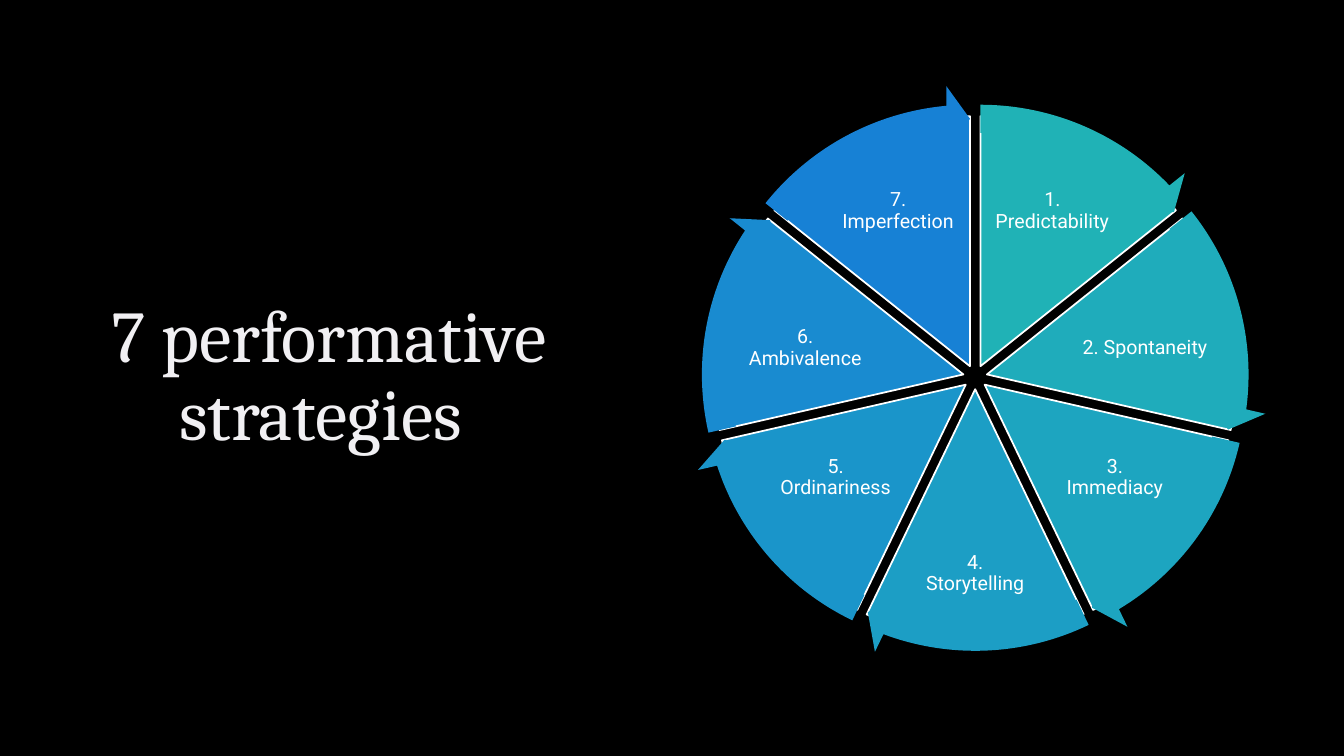
import math
from dataclasses import dataclass

from lxml import etree
from pptx import Presentation, util as u
from pptx.dml.color import RGBColor
from pptx.enum import shapes, text
from pptx.oxml import ns

COLOURS = {
    "background": "000000", "title": "F1F0F3", "outline": "404040", "white": "FFFFFF",
    "predictability": "20B2B6", "spontaneity": "1FACBB", "immediacy": "1DA5C0",
    "storytelling": "1C9EC5", "ordinariness": "1A95CA", "ambivalence": "198BD0",
    "imperfection": "1781D5",
}

# Grid of 160 columns by 90 rows with square cells
COLS, ROWS = 160, 90
SLIDE_W, SLIDE_H = u.Inches(40 / 3), u.Inches(7.5)
CELL = SLIDE_H / ROWS

# Wheel geometry, in grid cells; preset angles count 216 units to a turn
CENTRE_X, CENTRE_Y = 116.1, 44.9
GAP, PIE, ARROW = 1.44, 59.52, 66.96
TURN = 216
BAND, HEAD_ANGLE, HEAD_WIDTH = 0.05, 3.28, 0.06


@dataclass(frozen=True)
class Box:
    x: float  # centre
    y: float
    w: float
    h: float

    def emu(self) -> list[int]:
        corner = (self.x - self.w / 2, self.y - self.h / 2)
        return [round(v * CELL) for v in (*corner, self.w, self.h)]


@dataclass(frozen=True)
class Strategy:
    label: str
    colour: str
    dx: float  # label centre, from the wheel's axis
    y: float
    w: float
    h: float


STRATEGIES = [
    Strategy("1. Predictability", "predictability", 9.18, 25.14, 14.16, 11.4),
    Strategy("2. Spontaneity", "spontaneity", 20.22, 41.46, 16.32, 9.96),
    Strategy("3. Immediacy", "immediacy", 16.62, 56.88, 14.16, 11.04),
    Strategy("4. Storytelling", "storytelling", 0, 68.34, 13.8, 9.96),
    Strategy("5. Ordinariness", "ordinariness", -16.62, 56.88, 14.16, 11.04),
    Strategy("6. Ambivalence", "ambivalence", -20.22, 41.46, 16.32, 9.96),
    Strategy("7. Imperfection", "imperfection", -9.18, 25.14, 14.16, 11.4),
]
STEP = TURN / len(STRATEGIES)

TITLE_FONT = {"name": "Cambria", "size": u.Pt(52)}
LABEL_FONT = {"name": "Roboto", "size": u.Pt(14)}
LABEL_INSETS = {f"margin_{side}": u.Inches(0.02) for side in ("left", "top", "right", "bottom")}


def rgb(name: str) -> RGBColor:
    return RGBColor.from_string(COLOURS[name])


def apply(target, values: dict) -> None:
    for name, value in values.items():
        setattr(target, name, value)


def add_text(s, box: Box, words: str, font: dict, colour: str, insets: dict):
    tf = s.shapes.add_textbox(*box.emu()).text_frame
    apply(tf, {"word_wrap": True, "vertical_anchor": text.MSO_ANCHOR.MIDDLE, **insets})
    p = tf.paragraphs[0]
    apply(p, {"alignment": text.PP_ALIGN.CENTER, "line_spacing": 0.9})
    r = p.add_run()
    r.text = words
    apply(r.font, font)
    r.font.color.rgb = rgb(colour)
    return r


def outline_text(r, colour: str, width: float, opacity: int) -> None:
    ln = etree.Element(ns.qn("a:ln"), w=str(u.Pt(width)))
    fill = etree.SubElement(ln, ns.qn("a:solidFill"))
    clr = etree.SubElement(fill, ns.qn("a:srgbClr"), val=COLOURS[colour])
    etree.SubElement(clr, ns.qn("a:alpha"), val=str(opacity * 1000))
    r.font._element.insert(0, ln)


def add_sector(s, kind, index: int, size: float, adjustments: list[float]):
    """Centre a shape on its slice, pushed outwards from the wheel's hub."""
    middle = math.tau * ((index + 0.5) / len(STRATEGIES) - 0.25)
    box = Box(CENTRE_X + GAP * math.cos(middle), CENTRE_Y + GAP * math.sin(middle), size, size)
    sp = s.shapes.add_shape(kind, *box.emu())
    for i, value in enumerate(adjustments):
        sp.adjustments[i] = value
    sp.shadow.inherit = False
    sp.fill.solid()
    sp.fill.fore_color.rgb = rgb(STRATEGIES[index].colour)
    return sp


def slice_angles(index: int) -> tuple[float, float]:
    start = TURN * 0.75 + index * STEP
    return start % TURN, (start + STEP) % TURN


def add_slice(s, index: int, item: Strategy) -> None:
    sp = add_sector(s, shapes.MSO_SHAPE.PIE, index, PIE, list(slice_angles(index)))
    sp.line.color.rgb = rgb("white")
    sp.line.width = u.Pt(1.25)
    box = Box(CENTRE_X + item.dx, item.y, item.w, item.h)
    add_text(s, box, item.label, LABEL_FONT, "white", LABEL_INSETS)


def add_arrow(s, index: int) -> None:
    start, end = slice_angles(index)
    adjustments = [BAND, HEAD_ANGLE, (end - HEAD_ANGLE) % TURN, start, HEAD_WIDTH]
    sp = add_sector(s, shapes.MSO_SHAPE.CIRCULAR_ARROW, index, ARROW, adjustments)
    sp.line.fill.background()


def main() -> None:
    prs = Presentation()
    apply(prs, {"slide_width": SLIDE_W, "slide_height": SLIDE_H})
    s = prs.slides.add_slide(prs.slide_layouts[6])
    s.background.fill.solid()
    s.background.fill.fore_color.rgb = rgb("background")

    # Title, ending in a no-break space
    title = add_text(s, Box(39.12, 45, 56.16, 74.88), "7 performative strategies ",
                     TITLE_FONT, "title", {})
    outline_text(title, "outline", 0.75, 10)

    # Wheel: labelled slices, then the arrows around the rim
    for index, item in enumerate(STRATEGIES):
        add_slice(s, index, item)
    for index in range(len(STRATEGIES)):
        add_arrow(s, index)

    prs.save("out.pptx")


if __name__ == "__main__":
    main()
